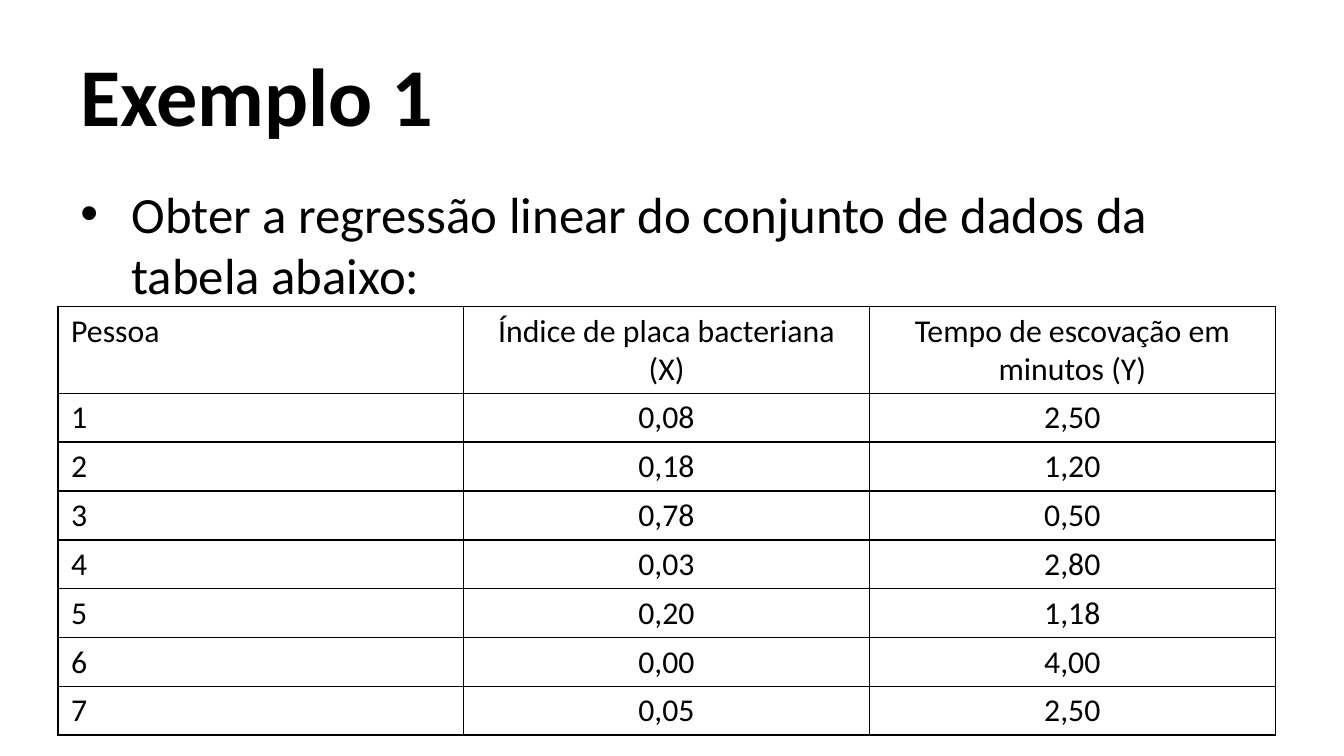
from lxml.etree import SubElement
from pptx import Presentation
from pptx.dml.color import RGBColor
from pptx.enum.text import MSO_ANCHOR, PP_ALIGN
from pptx.oxml.ns import qn
from pptx.util import Inches, Pt

COLORS = {"ink": "000000", "paper": "FFFFFF"}
FORMATS = {
    "title": {"name": "Calibri", "size": Pt(44), "bold": True},
    "task": {"name": "Calibri", "size": Pt(27.2), "bold": False},
    "data": {"name": "Calibri", "size": Pt(17), "bold": False},
}
MARGINS = {
    "margin_left": Inches(0.1),
    "margin_right": Inches(0.1),
    "margin_top": Inches(0.04),
    "margin_bottom": Inches(0.04),
}
MEASUREMENTS = [
    ("Pessoa", "Índice de placa bacteriana (X)", "Tempo de escovação em minutos (Y)"),
    ("1", "0,08", "2,50"),
    ("2", "0,18", "1,20"),
    ("3", "0,78", "0,50"),
    ("4", "0,03", "2,80"),
    ("5", "0,20", "1,18"),
    ("6", "0,00", "4,00"),
    ("7", "0,05", "2,50"),
]


def write(paragraph, words, role):
    run = paragraph.add_run()
    run.text = words
    for attribute, value in FORMATS[role].items():
        setattr(run.font, attribute, value)
    run.font.color.rgb = RGBColor.from_string(COLORS["ink"])


deck = Presentation()
deck.slide_width = Inches(10)
deck.slide_height = deck.slide_width * 9 // 16
slide = deck.slides.add_slide(deck.slide_layouts[6])
slide.background.fill.solid()
slide.background.fill.fore_color.rgb = RGBColor.from_string(COLORS["paper"])

left, width = int(deck.slide_width * 0.05), int(deck.slide_width * 0.9)
title = slide.shapes.add_textbox(left, Inches(0.23), width, Inches(0.94)).text_frame
title.word_wrap = True
title.vertical_anchor = MSO_ANCHOR.MIDDLE
write(title.paragraphs[0], "Exemplo 1", "title")

task = slide.shapes.add_textbox(left, Inches(1.31), width, Inches(0.87)).text_frame
task.word_wrap = True
write(task.paragraphs[0], "Obter a regressão linear do conjunto de dados da tabela abaixo:", "task")
bullet = task.paragraphs[0]._p.get_or_add_pPr()
bullet.set("marL", str(Inches(0.38)))
bullet.set("indent", str(-Inches(0.38)))
SubElement(SubElement(bullet, qn("a:spcBef")), qn("a:spcPct"), val="20000")
SubElement(bullet, qn("a:buFont"), typeface="Arial")
SubElement(bullet, qn("a:buChar"), char="•")

data = slide.shapes.add_table(
    len(MEASUREMENTS), len(MEASUREMENTS[0]),
    Inches(0.43), Inches(2.28), Inches(9.06), Inches(3.15),
).table
data.first_row = data.horz_banding = False
for column in data.columns:
    column.width = Inches(3.02)

for r, person in enumerate(MEASUREMENTS):
    data.rows[r].height = Inches(0.35 if r else 0.62)
    for c, words in enumerate(person):
        cell = data.cell(r, c)
        for attribute, value in MARGINS.items():
            setattr(cell, attribute, value)
        paragraph = cell.text_frame.paragraphs[0]
        paragraph.alignment = PP_ALIGN.CENTER if c else PP_ALIGN.LEFT
        write(paragraph, words, "data")
        borders = cell._tc.get_or_add_tcPr()
        for side in ("a:lnL", "a:lnR", "a:lnT", "a:lnB"):
            border = SubElement(borders, qn(side), w=str(Pt(1)))
            ink = SubElement(border, qn("a:solidFill"))
            SubElement(ink, qn("a:srgbClr"), val=COLORS["ink"])
        cell.fill.background()

deck.save("out.pptx")
